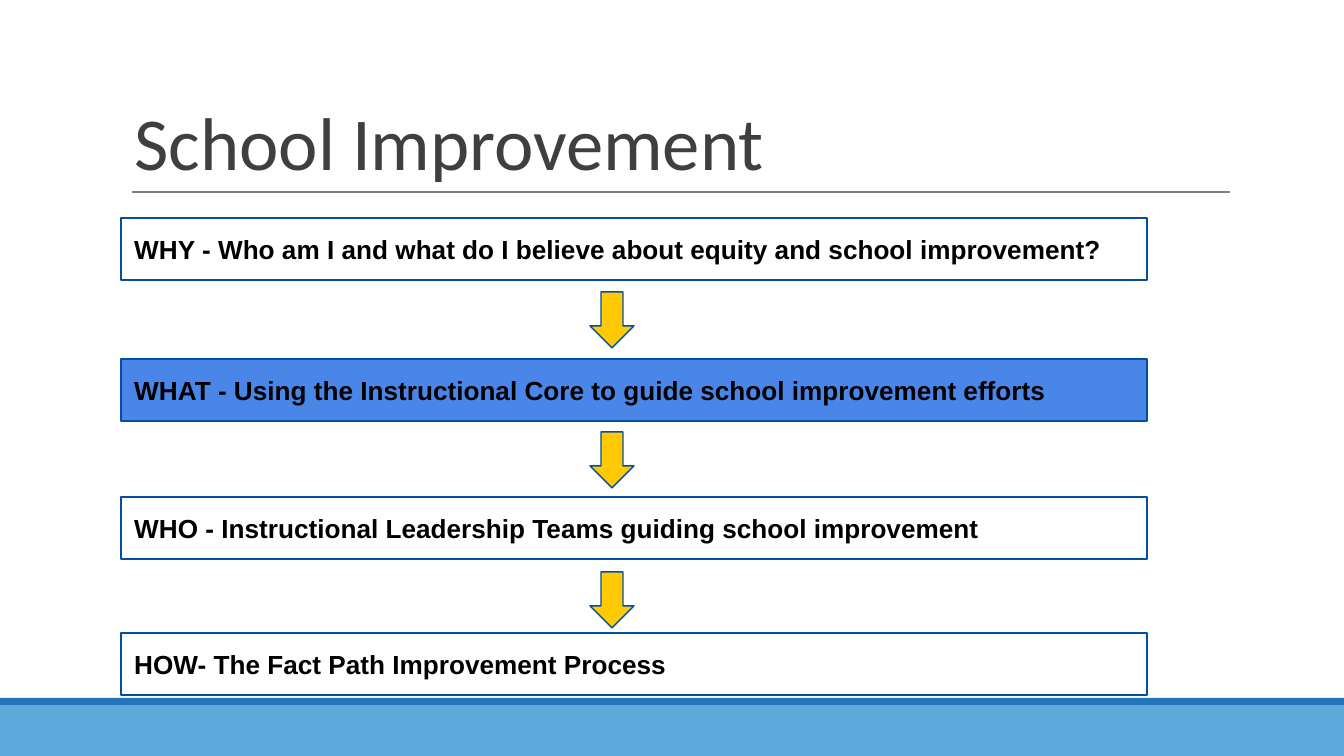
import pptx
import pptx.dml.color
import pptx.enum.shapes
import pptx.enum.text
import pptx.util
import lxml.etree

PX_PER_INCH = 134.4
COLORS = {
    "band": "5DA9DB",
    "stripe": "2275B9",
    "rule": "7F7F7F",
    "title": "3F3F3F",
    "outline": "034EA1",
    "highlight": "4A86E8",
    "arrow": "FFCA05",
    "text": "000000",
}
# Each step: top in px, fill colour name, wording
STEPS = [
    (218, None, "WHY - Who am I and what do I believe about equity and school improvement?"),
    (359, "highlight", "WHAT - Using the Instructional Core to guide school improvement efforts"),
    (497, None, "WHO - Instructional Leadership Teams guiding school improvement"),
    (633, None, "HOW- The Fact Path Improvement Process"),
]
ARROW_TOP, ARROW_STEP = 292, 140
SHAPES = pptx.enum.shapes.MSO_SHAPE
ANCHORS = pptx.enum.text.MSO_ANCHOR


def px(length):
    return pptx.util.Emu(round(length * 914400 / PX_PER_INCH))


def color(name):
    return pptx.dml.color.RGBColor.from_string(COLORS[name])


def style_text(frame, size, font_name, color_name, bold=False):
    for para in frame.paragraphs:
        para.alignment = pptx.enum.text.PP_ALIGN.LEFT
        for span in para.runs:
            span.font.size = pptx.util.Pt(size)
            span.font.name = font_name
            span.font.bold = bold
            span.font.color.rgb = color(color_name)


def add_block(page, kind, left, top, width, height, fill=None, line=None):
    block = page.shapes.add_shape(kind, px(left), px(top), px(width), px(height))
    block.shadow.inherit = False
    if fill:
        block.fill.solid()
        block.fill.fore_color.rgb = color(fill)
    else:
        block.fill.background()
    if line:
        block.line.color.rgb = color(line)
        block.line.width = pptx.util.Pt(0.75)
    else:
        block.line.fill.background()
    return block


def add_rule(page, left, right, top):
    rule = page.shapes.add_connector(
        pptx.enum.shapes.MSO_CONNECTOR.STRAIGHT, px(left), px(top), px(right), px(top))
    rule.line.color.rgb = color("rule")
    rule.line.width = pptx.util.Pt(0.75)
    properties = rule._element.spPr
    lxml.etree.SubElement(properties, pptx.oxml.ns.qn("a:effectLst"))


def set_title(page, wording):
    title = page.shapes.title
    title.left, title.top, title.width, title.height = px(121), px(32), px(1109), px(160)
    frame = title.text_frame
    frame.text = wording
    frame.word_wrap = True
    frame.auto_size = pptx.enum.text.MSO_AUTO_SIZE.NONE
    frame.vertical_anchor = ANCHORS.BOTTOM
    frame.paragraphs[0].line_spacing = 0.85
    style_text(frame, 40, "Calibri", "title")


def add_step(page, top, fill, wording):
    box = add_block(page, SHAPES.RECTANGLE, 121, top, 1026, 62, fill, "outline")
    frame = box.text_frame
    frame.text = wording
    frame.word_wrap = True
    frame.vertical_anchor = ANCHORS.MIDDLE
    frame.margin_top = frame.margin_bottom = pptx.util.Inches(0.1)
    style_text(frame, 14, "Arial", "text", bold=True)


def main():
    deck = pptx.Presentation()
    deck.slide_width, deck.slide_height = px(1344), px(756)
    page = deck.slides.add_slide(deck.slide_layouts[5])

    # Footer band and title
    add_block(page, SHAPES.RECTANGLE, 0, 705, 1344, 51, "band")
    add_block(page, SHAPES.RECTANGLE, 0, 698, 1344, 7, "stripe")
    add_rule(page, 132, 1230, 192)
    set_title(page, "School Improvement")

    # Steps with an arrow between each pair
    for top, fill, wording in STEPS:
        add_step(page, top, fill, wording)
    for index in range(len(STEPS) - 1):
        add_block(page, SHAPES.DOWN_ARROW, 590, ARROW_TOP + index * ARROW_STEP,
                  44, 56, "arrow", "outline")

    deck.save("out.pptx")


if __name__ == "__main__":
    main()
